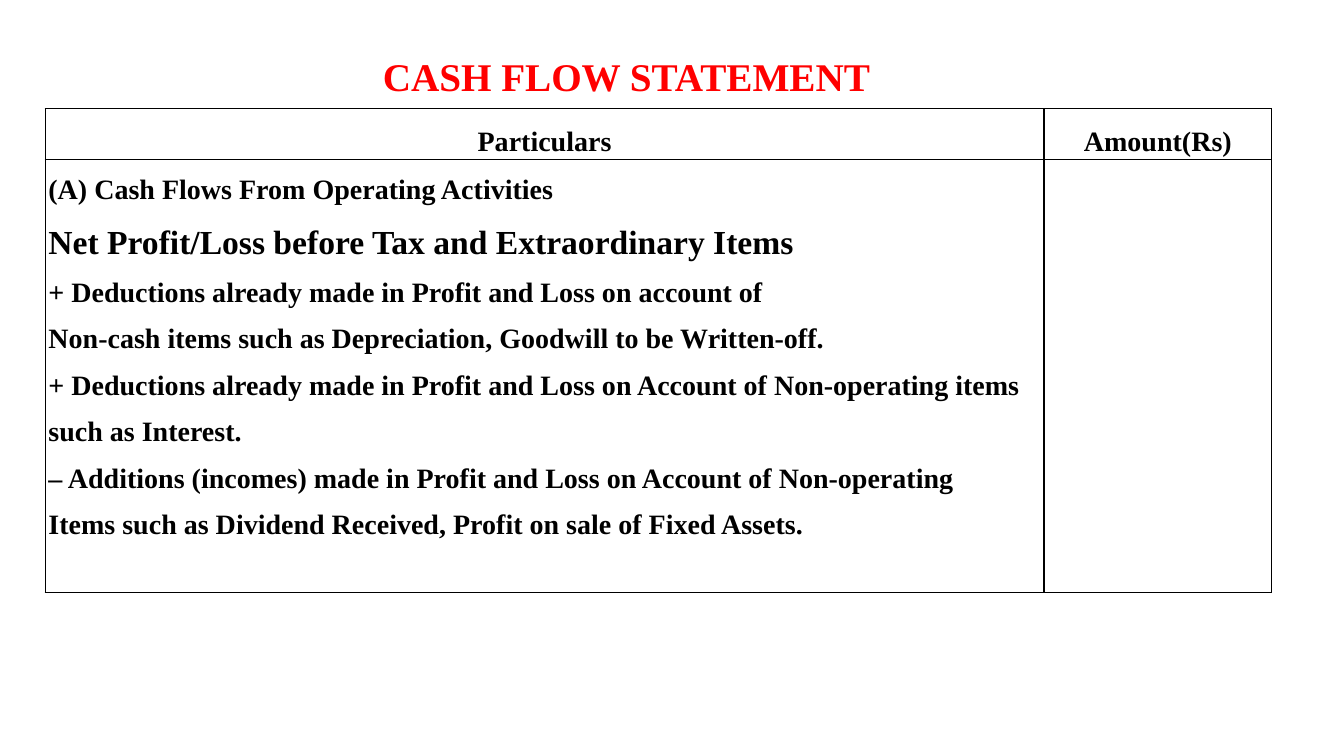
from dataclasses import dataclass

from lxml import etree
from pptx import Presentation
from pptx.dml.color import RGBColor
from pptx.enum.text import MSO_ANCHOR, MSO_AUTO_SIZE, PP_ALIGN
from pptx.oxml.ns import qn
from pptx.table import _Cell
from pptx.text.text import TextFrame
from pptx.util import Cm, Pt

CENTER = PP_ALIGN.CENTER
JUSTIFY = PP_ALIGN.JUSTIFY
LEFT = PP_ALIGN.LEFT
MIDDLE = MSO_ANCHOR.MIDDLE
TOP = MSO_ANCHOR.TOP
FIT_SHAPE = MSO_AUTO_SIZE.SHAPE_TO_FIT_TEXT

FONT = "Times New Roman"
BLACK = "000000"
RED = "FF0000"
WHITE = "FFFFFF"
COLUMN_WIDTHS = (25.17, 5.74)
ROW_HEIGHTS = (1.26, 10.92)


@dataclass
class Line:
    text: str
    align: PP_ALIGN = LEFT
    size: float = 20


HEADINGS = ("Particulars", "Amount(Rs)")
OPERATING_ACTIVITIES = [
    Line("(A) Cash Flows From Operating Activities", JUSTIFY),
    Line("Net Profit/Loss before Tax and Extraordinary Items", size=24),
    Line("+ Deductions already made in Profit and Loss on account of"),
    Line("Non-cash items such as Depreciation, Goodwill to be Written-off."),
    Line("+ Deductions already made in Profit and Loss on Account of "
         "Non-operating items such as Interest."),
    Line("– Additions (incomes) made in Profit and Loss on Account of Non-operating"),
    Line("Items such as Dividend Received, Profit on sale of Fixed Assets."),
]


def color(value: str) -> RGBColor:
    return RGBColor.from_string(value)


def write(frame: TextFrame, text: str, *, size: float, align: PP_ALIGN,
          ink: str = BLACK, spacing: float = 1.0, first: bool = True) -> None:
    para = frame.paragraphs[0] if first else frame.add_paragraph()
    para.alignment = align
    para.line_spacing = spacing
    span = para.add_run()
    span.text = text
    span.font.name = FONT
    span.font.size = Pt(size)
    span.font.bold = True
    span.font.color.rgb = color(ink)


def add_borders(cell: _Cell) -> None:
    properties = cell._tc.get_or_add_tcPr()
    for side in ("lnL", "lnR", "lnT", "lnB"):
        border = etree.SubElement(properties, qn(f"a:{side}"), w=str(Pt(1)))
        fill = etree.SubElement(border, qn("a:solidFill"))
        etree.SubElement(fill, qn("a:srgbClr"), val=BLACK)


def fill_cell(cell: _Cell, lines: list[Line], anchor: MSO_ANCHOR) -> None:
    add_borders(cell)
    cell.fill.solid()
    cell.fill.fore_color.rgb = color(WHITE)
    cell.margin_left = cell.margin_right = Cm(0.08)
    cell.margin_top = cell.margin_bottom = 0
    cell.vertical_anchor = anchor
    for index, line in enumerate(lines):
        write(cell.text_frame, line.text, size=line.size, align=line.align,
              spacing=1.5, first=index == 0)


def main() -> None:
    deck = Presentation()
    deck.slide_width, deck.slide_height = Cm(33.87), Cm(19.05)
    page = deck.slides.add_slide(deck.slide_layouts[6])

    title = page.shapes.add_textbox(Cm(9.32), Cm(1.19), Cm(12.93), Cm(1.45))
    title.text_frame.word_wrap = False
    title.text_frame.auto_size = FIT_SHAPE
    title.text_frame.vertical_anchor = MIDDLE
    write(title.text_frame, "CASH FLOW STATEMENT", size=28, align=CENTER, ink=RED)

    table = page.shapes.add_table(
        len(ROW_HEIGHTS), len(COLUMN_WIDTHS), Cm(1.14), Cm(2.74),
        Cm(sum(COLUMN_WIDTHS)), Cm(sum(ROW_HEIGHTS))).table
    table.first_row = table.horz_banding = False
    for column, width in zip(table.columns, COLUMN_WIDTHS):
        column.width = Cm(width)
    for row, height in zip(table.rows, ROW_HEIGHTS):
        row.height = Cm(height)

    for index, heading in enumerate(HEADINGS):
        fill_cell(table.cell(0, index), [Line(heading, CENTER)], MIDDLE)
    fill_cell(table.cell(1, 0), OPERATING_ACTIVITIES, TOP)
    fill_cell(table.cell(1, 1), [], TOP)

    deck.save("out.pptx")


if __name__ == "__main__":
    main()
